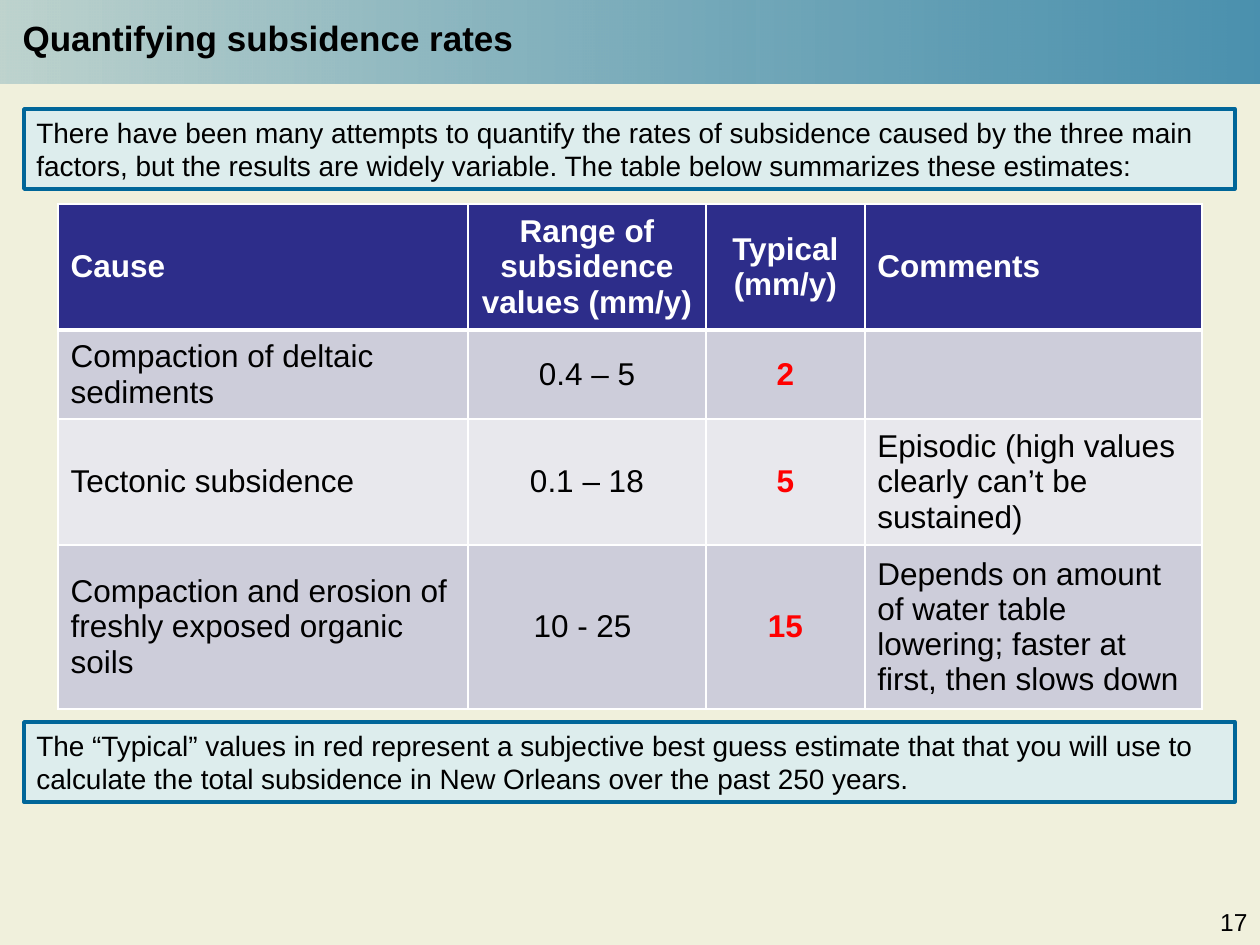
from lxml import etree
from pptx import Presentation
from pptx import util as u
from pptx.dml.color import RGBColor
from pptx.enum import shapes, text
from pptx.oxml.ns import qn

PX = 914400 // 126  # EMU per px, 126 px to the inch

BLACK = RGBColor(0x00, 0x00, 0x00)
WHITE = RGBColor(0xFF, 0xFF, 0xFF)
RED = RGBColor(0xFF, 0x00, 0x00)
CREAM = RGBColor(0xF0, 0xF0, 0xDC)
TEAL = RGBColor(0x00, 0x66, 0x99)
TEAL_LIGHT = RGBColor(0x0A, 0x6C, 0x9D)
PALE_BLUE = RGBColor(0xCC, 0xEC, 0xFF)
NAVY = RGBColor(0x2D, 0x2D, 0x8A)
GREY_DARK = RGBColor(0xCD, 0xCD, 0xDA)
GREY_LIGHT = RGBColor(0xE8, 0xE8, 0xED)

LEFT, CENTER, RIGHT = text.PP_ALIGN.LEFT, text.PP_ALIGN.CENTER, text.PP_ALIGN.RIGHT
TOP, MIDDLE = text.MSO_ANCHOR.TOP, text.MSO_ANCHOR.MIDDLE


def write(frame, words, size=18, color=BLACK, bold=False, align=LEFT,
          anchor=TOP, wrap=True, after=0):
    """Fill a text frame, one paragraph per line of words."""
    frame.text = words
    frame.word_wrap = wrap
    frame.vertical_anchor = anchor
    for paragraph in frame.paragraphs:
        paragraph.alignment = align
        paragraph.space_after = u.Pt(after)
        paragraph.font.name = "Arial"
        paragraph.font.size = u.Pt(size)
        paragraph.font.bold = bold
        paragraph.font.color.rgb = color


def set_alpha(shape, *percents):
    """Give each fill colour of a shape its opacity, in order."""
    fill_colors = shape.fill._xPr.xpath("./a:solidFill/a:srgbClr | ./a:gradFill//a:srgbClr")
    for color, percent in zip(fill_colors, percents):
        etree.SubElement(color, qn("a:alpha"), val=str(percent * 1000))


prs = Presentation()
prs.slide_width, prs.slide_height = 1260 * PX, 945 * PX
slide = prs.slides.add_slide(prs.slide_layouts[5])
slide.background.fill.solid()
slide.background.fill.fore_color.rgb = CREAM

# Header band: two translucent layers behind the title
for layer in range(2):
    band = slide.shapes.add_shape(shapes.MSO_SHAPE.RECTANGLE, 0, 0, 1260 * PX, 84 * PX)
    band.shadow.inherit = False
    band.line.fill.background()
    band.fill.gradient()
    band.fill.gradient_angle = 0
    for stop, color in zip(band.fill.gradient_stops, (TEAL, TEAL_LIGHT)):
        stop.color.rgb = color
    set_alpha(band, 11, 47)
    slide.shapes._spTree.insert(2, band._element)

# Title
title = slide.shapes.title
title.left, title.top, title.width, title.height = 10 * PX, 10 * PX, 520 * PX, 55 * PX
write(title.text_frame, "Quantifying subsidence rates", size=20, bold=True, wrap=False)

# Slide number
page_number = slide.shapes.add_textbox(1207 * PX, 901 * PX, 53 * PX, 65 * PX)
write(page_number.text_frame, "17", size=14, align=RIGHT)

# Statements above and below the table
statements = [
    (109, "There have been many attempts to quantify the rates of subsidence caused by "
          "the three main factors, but the results are widely variable. The table below "
          "summarizes these estimates:"),
    (722, "The “Typical” values in red represent a subjective best guess estimate that "
          "that you will use to calculate the total subsidence in New Orleans over the "
          "past 250 years."),
]
for top, words in statements:
    statement = slide.shapes.add_shape(
        shapes.MSO_SHAPE.RECTANGLE, 24 * PX, top * PX, 1211 * PX, 80 * PX)
    statement.shadow.inherit = False
    statement.fill.solid()
    statement.fill.fore_color.rgb = PALE_BLUE
    set_alpha(statement, 50)
    statement.line.color.rgb = TEAL
    statement.line.width = u.Pt(2)
    write(statement.text_frame, words, size=16, after=3)

# Table of estimates
estimates = [
    ("Cause", "Range of subsidence values (mm/y)", "Typical\n(mm/y)", "Comments"),
    ("Compaction of deltaic sediments", "0.4 – 5", "2", ""),
    ("Tectonic subsidence", "0.1 – 18", "5",
     "Episodic (high values clearly can’t be sustained)"),
    ("Compaction and erosion of freshly exposed organic soils", "10 - 25 ", "15",
     "Depends on amount of water table lowering; faster at first, then slows down"),
]
column_widths = (410, 238, 159, 337)
row_heights = (125, 89, 126, 164)
column_aligns = (LEFT, CENTER, CENTER, LEFT)
row_fills = (NAVY, GREY_DARK, GREY_LIGHT, GREY_DARK)
TYPICAL = 2

table = slide.shapes.add_table(
    len(row_heights), len(column_widths), 58 * PX, 204 * PX,
    sum(column_widths) * PX, sum(row_heights) * PX).table
for column, width in zip(table.columns, column_widths):
    column.width = width * PX
for row, height in zip(table.rows, row_heights):
    row.height = height * PX

for r, entries in enumerate(estimates):
    for c, words in enumerate(entries):
        cell = table.cell(r, c)
        header, typical = r == 0, c == TYPICAL
        write(cell.text_frame, words, bold=header or typical, align=column_aligns[c],
              color=WHITE if header else RED if typical else BLACK)
        cell.vertical_anchor = MIDDLE

        # White rules, heavier between header and body
        heavy_sides = {0: "lnB", 1: "lnT"}
        for side in ("lnL", "lnR", "lnT", "lnB"):
            points = 3 if heavy_sides.get(r) == side else 1
            rule = etree.SubElement(cell._tc.get_or_add_tcPr(), qn("a:" + side),
                                    w=str(u.Pt(points)))
            rule_fill = etree.SubElement(rule, qn("a:solidFill"))
            etree.SubElement(rule_fill, qn("a:srgbClr"), val=str(WHITE))
        cell.fill.solid()
        cell.fill.fore_color.rgb = row_fills[r]

prs.save("out.pptx")
